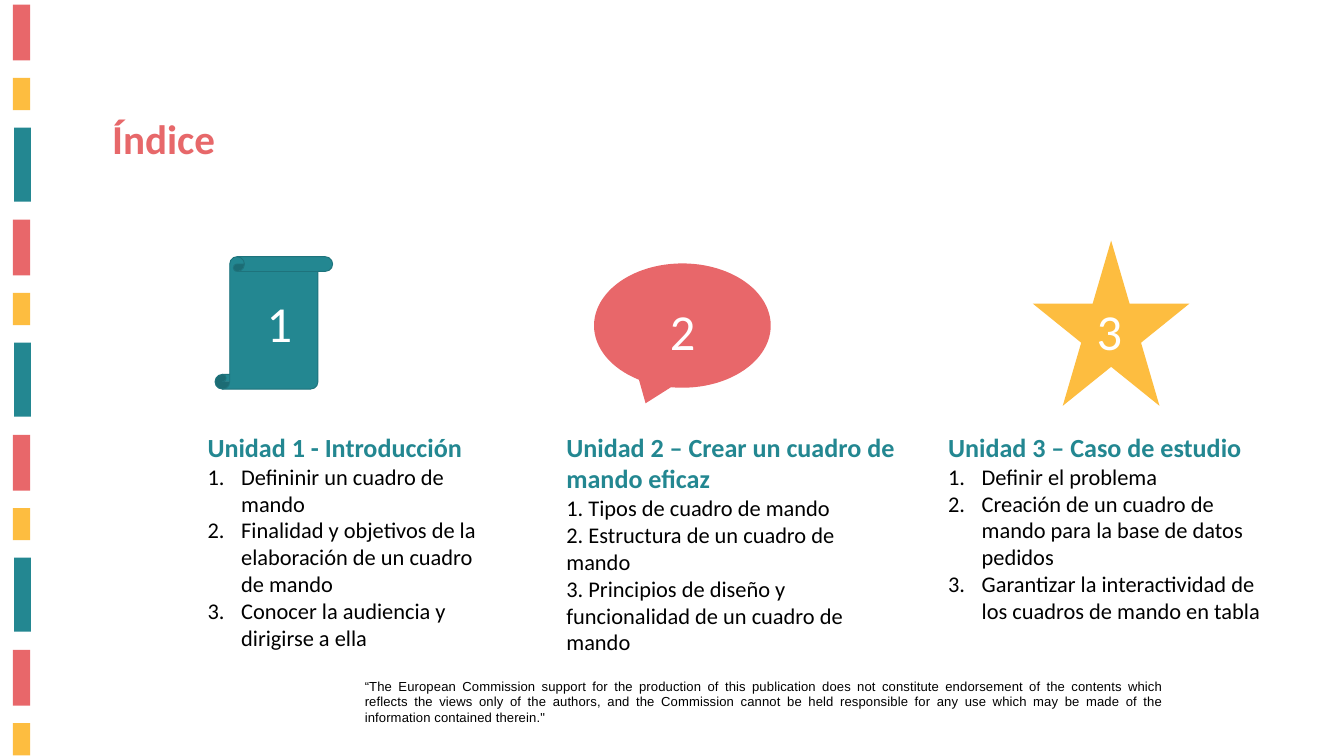
"""Build the course index slide with three units and a striped edge."""
from dataclasses import dataclass

import lxml.etree
import pptx
import pptx.dml.color
import pptx.enum.shapes
import pptx.enum.text
import pptx.oxml.ns
import pptx.util

COLS, ROWS = 20, 11.25
CELL = pptx.util.Inches(1)
HUES = {"red": "E8676A", "rose": "E7686A", "gold": "FDBD40", "teal": "238791",
        "edge": "1E737C", "black": "000000", "white": "FFFFFF"}
KINDS = pptx.enum.shapes.MSO_SHAPE
ALIGN = pptx.enum.text.PP_ALIGN


@dataclass
class Box:
    col: float
    row: float
    wide: float
    high: float

    def spans(self) -> list[int]:
        return [round(n * CELL) for n in (self.col, self.row, self.wide, self.high)]


@dataclass
class Style:
    size: int
    hue: str
    bold: bool = False
    face: str = "Calibri"


@dataclass
class Unit:
    icon: Box
    kind: int
    hue: str
    edge: str
    mark: Box
    body: Box
    head: str
    steps: list[str]
    listed: bool


TITLE = Style(44, "rose", True)
HEAD = Style(28, "teal", True)
STEP = Style(24, "black")
MARK = Style(54, "white")
NOTE = Style(14, "black", face="Arial")

PITCH = 3.2
BANDS = [(Box(0.19, 0.07, 0.26, 0.83), "red"),
         (Box(0.19, 1.16, 0.26, 0.48), "gold"),
         (Box(0.21, 1.9, 0.25, 1.1), "teal")]
TOP = 6.37
UNITS = [
    Unit(Box(3.2, 3.82, 1.75, 1.97), KINDS.VERTICAL_SCROLL, "teal", "edge",
         Box(3.87, 4.3, 1.58, 1.01), Box(2.99, TOP, 4.3, 3.87),
         "Unidad 1 - Introducción",
         ["Defininir un cuadro de mando",
          "Finalidad y objetivos de la elaboración de un cuadro de mando",
          "Conocer la audiencia y dirigirse a ella"], True),
    Unit(Box(8.84, 3.92, 2.63, 1.85), KINDS.OVAL_CALLOUT, "red", "",
         Box(9.87, 4.41, 1.08, 1.01), Box(8.33, TOP, 5.08, 3.47),
         "Unidad 2 – Crear un cuadro de mando eficaz",
         ["1. Tipos de cuadro de mando",
          "2. Estructura de un cuadro de mando",
          "3. Principios de diseño y funcionalidad de un cuadro de mando"], False),
    Unit(Box(15.37, 3.58, 2.33, 2.46), KINDS.STAR_5_POINT, "gold", "",
         Box(16.22, 4.41, 1.5, 1.01), Box(14.01, TOP, 5.08, 3),
         "Unidad 3 – Caso de estudio",
         ["Definir el problema",
          "Creación de un cuadro de mando para la base de datos pedidos",
          "Garantizar la interactividad de los cuadros de mando en tabla"], True),
]
CREDIT = ("“The European Commission support for the production of this publication "
          "does not constitute endorsement of the contents which reflects the views "
          "only of the authors, and the Commission cannot be held responsible for any "
          "use which may be made of the information contained therein.\"")


def tint(name: str) -> pptx.dml.color.RGBColor:
    return pptx.dml.color.RGBColor.from_string(HUES[name])


def draw(slide, kind: int, box: Box, hue: str, edge: str = "") -> None:
    shape = slide.shapes.add_shape(kind, *box.spans())
    shape.shadow.inherit = False
    shape.fill.solid()
    shape.fill.fore_color.rgb = tint(hue)
    if edge:
        shape.line.color.rgb = tint(edge)
        shape.line.width = pptx.util.Pt(1)
    else:
        shape.line.fill.background()


def frame(slide, box: Box):
    text = slide.shapes.add_textbox(*box.spans()).text_frame
    text.word_wrap = True
    text.auto_size = pptx.enum.text.MSO_AUTO_SIZE.SHAPE_TO_FIT_TEXT
    return text


def write(line, words: str, style: Style):
    run = line.add_run()
    run.text = words
    run.font.name = style.face
    run.font.size = pptx.util.Pt(style.size)
    run.font.bold = style.bold
    run.font.color.rgb = tint(style.hue)
    return run


def count(line) -> None:
    props = line._p.get_or_add_pPr()
    props.set("marL", str(CELL // 2))
    props.set("indent", str(-CELL // 2))
    tag = pptx.oxml.ns.qn
    lxml.etree.SubElement(props, tag("a:buFont")).set("typeface", "+mj-lt")
    lxml.etree.SubElement(props, tag("a:buAutoNum")).set("type", "arabicPeriod")


def label(slide, box: Box, words: str, style: Style) -> None:
    write(frame(slide, box).paragraphs[0], words, style)


def outline(slide, unit: Unit) -> None:
    text = frame(slide, unit.body)
    write(text.paragraphs[0], unit.head, HEAD)
    for step in unit.steps:
        line = text.add_paragraph()
        if unit.listed:
            count(line)
        write(line, step, STEP)


def stripe(slide) -> None:
    for turn in range(4):
        for band, hue in BANDS:
            row = band.row + turn * PITCH
            if row < ROWS:
                draw(slide, KINDS.RECTANGLE,
                     Box(band.col, row, band.wide, band.high), hue)


def credit(slide) -> None:
    line = frame(slide, Box(5.33, 10.04, 12.08, 0.81)).paragraphs[0]
    line.alignment = ALIGN.JUSTIFY
    run = write(line, CREDIT, NOTE)
    run._r.get_or_add_rPr().set("spc", "10")


def main() -> None:
    deck = pptx.Presentation()
    deck.slide_width, deck.slide_height = COLS * CELL, round(ROWS * CELL)
    slide = deck.slides.add_slide(deck.slide_layouts[6])
    stripe(slide)
    credit(slide)
    label(slide, Box(1.57, 1.64, 6.77, 0.84), "Índice", TITLE)
    for rank, unit in enumerate(UNITS, 1):
        draw(slide, unit.kind, unit.icon, unit.hue, unit.edge)
        outline(slide, unit)
        label(slide, unit.mark, str(rank), MARK)
    deck.save("out.pptx")


if __name__ == "__main__":
    main()
